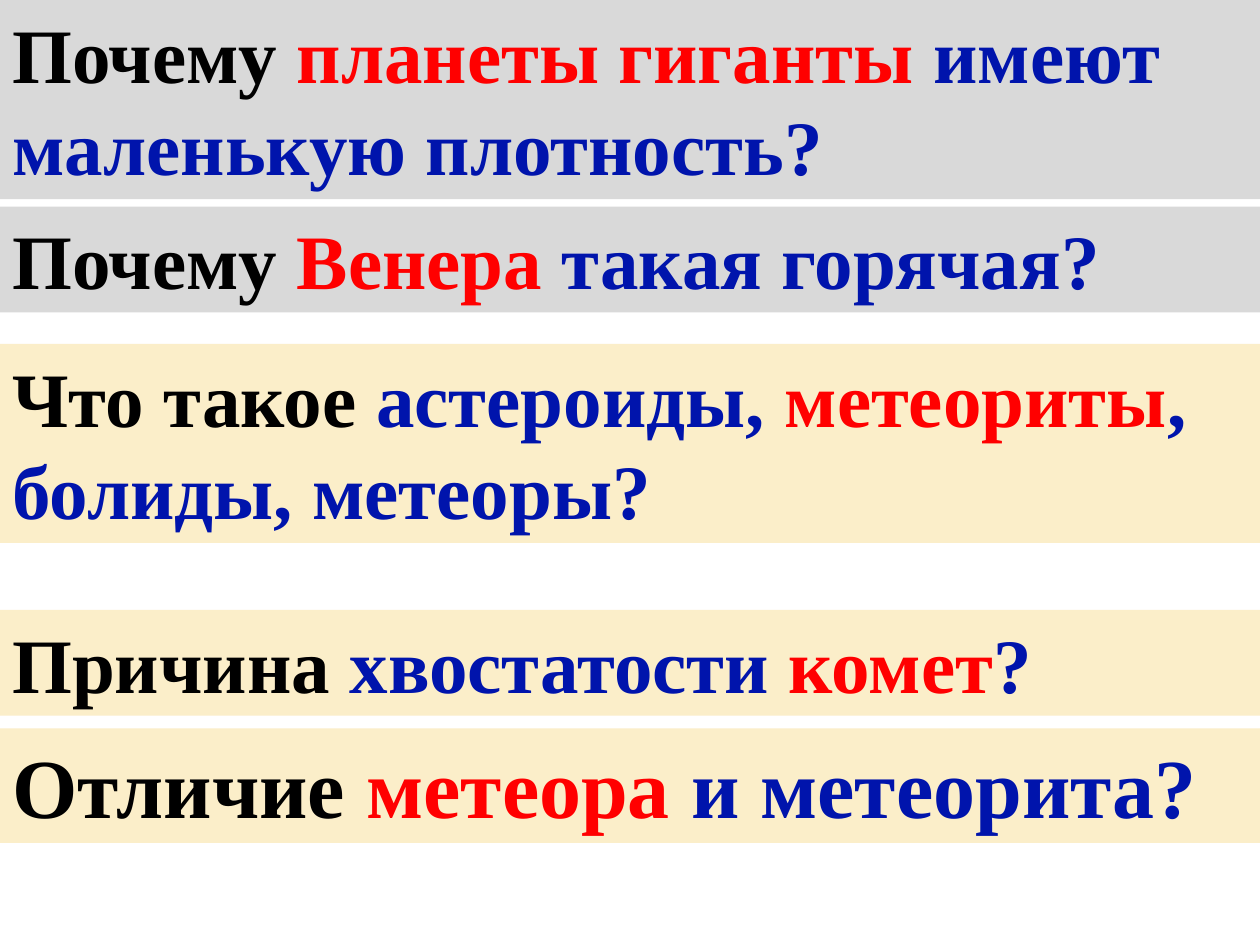
from pptx import Presentation
from pptx.dml.color import RGBColor
from pptx.enum.text import MSO_AUTO_SIZE
from pptx.util import Inches, Pt

BLACK = RGBColor(0x00, 0x00, 0x00)
RED = RGBColor(0xFF, 0x00, 0x00)
BLUE = RGBColor(0x00, 0x14, 0xAC)
GREY = RGBColor(0xD9, 0xD9, 0xD9)
CREAM = RGBColor(0xFB, 0xEE, 0xC9)

QUESTIONS = [
    (0, 1.58, GREY, 44, [("Почему ", BLACK), ("планеты гиганты ", RED),
                         ("имеют маленькую плотность?", BLUE)]),
    (1.64, 0.84, GREY, 44, [("Почему ", BLACK), ("Венера", RED),
                            (" такая горячая?", BLUE)]),
    (2.73, 1.58, CREAM, 44, [("Что такое ", BLACK), ("астероиды, ", BLUE),
                             ("метеориты", RED), (", болиды, метеоры?", BLUE)]),
    (4.84, 0.84, CREAM, 44, [("Причина ", BLACK), ("хвостатости ", BLUE),
                             ("комет", RED), ("?", BLUE)]),
    (5.78, 0.91, CREAM, 48, [("Отличие ", BLACK), ("метеора", RED),
                             (" и метеорита?", BLUE)]),
]


def add_question(slide, left, top, width, height, band_color, size, phrases):
    """Place one question on a coloured band filling the given box."""
    band = slide.shapes.add_textbox(left, top, width, height)
    band.fill.solid()
    band.fill.fore_color.rgb = band_color
    frame = band.text_frame
    frame.word_wrap = True
    frame.auto_size = MSO_AUTO_SIZE.SHAPE_TO_FIT_TEXT
    question = frame.paragraphs[0]
    for wording, color in phrases:
        phrase = question.add_run()
        phrase.text = wording
        phrase.font.name = "Times New Roman"
        phrase.font.size = Pt(size)
        phrase.font.bold = True
        phrase.font.color.rgb = color


def main():
    """Build the slide of astronomy questions."""
    deck = Presentation()
    deck.slide_width = Inches(10)
    deck.slide_height = Inches(7.5)
    slide = deck.slides.add_slide(deck.slide_layouts[6])
    for top, height, band_color, size, phrases in QUESTIONS:
        add_question(slide, Inches(0), Inches(top), deck.slide_width,
                     Inches(height), band_color, size, phrases)
    deck.save("out.pptx")


if __name__ == "__main__":
    main()
